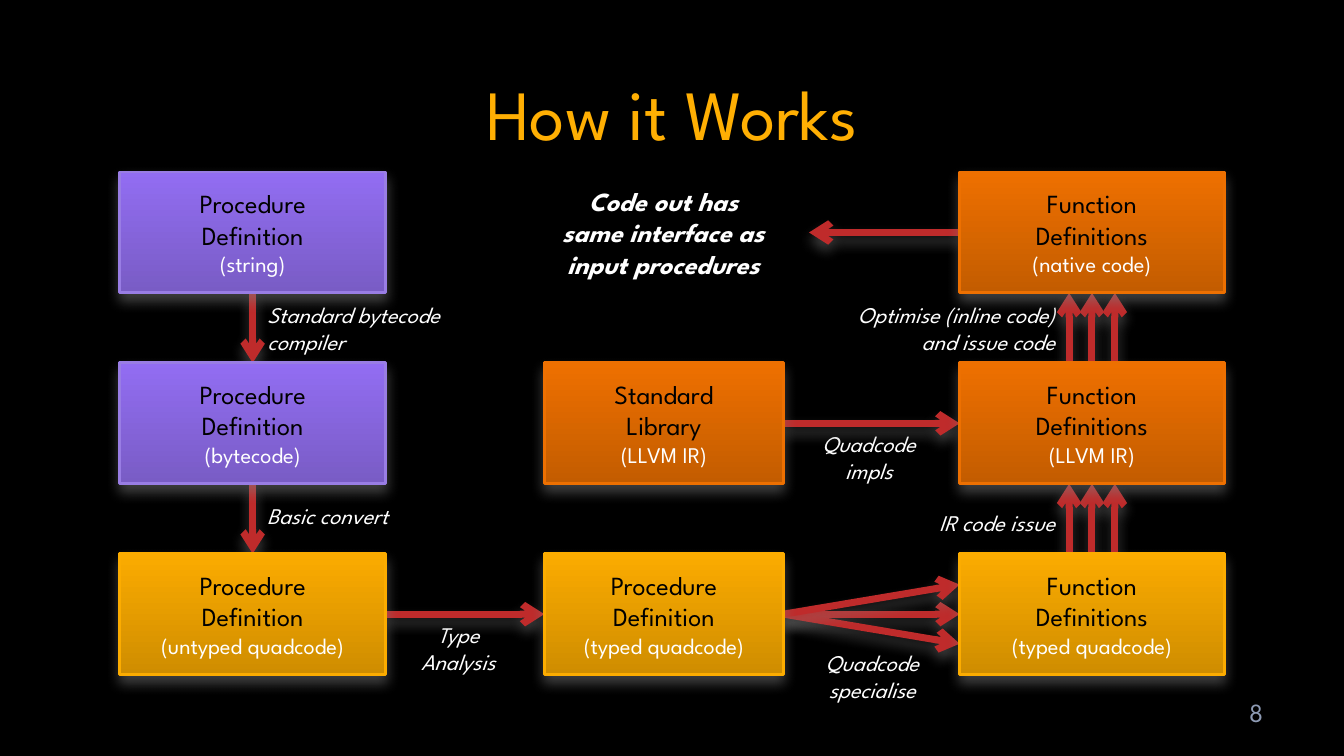
from dataclasses import dataclass

from pptx import Presentation
from pptx.dml.color import RGBColor
from pptx.enum import shapes, text
from pptx.oxml import parse_xml
from pptx.oxml.ns import nsdecls
from pptx.util import Inches, Pt

LEFT, CENTER, RIGHT = text.PP_ALIGN.LEFT, text.PP_ALIGN.CENTER, text.PP_ALIGN.RIGHT
TOP_SIDE, LEFT_SIDE, BOTTOM_SIDE, RIGHT_SIDE = range(4)


@dataclass(frozen=True)
class Style:
    size: float
    color: str
    bold: bool = False
    italic: bool = False


@dataclass(frozen=True)
class Theme:
    font: str = "League Spartan"
    background: str = "000000"
    arrow: str = "BF2B2B"
    shadow: str = "808080"
    # Gradient from bottom to top, then outline
    purple: tuple = ("795CC5", "926DF2", "997DE4")
    orange: tuple = ("C35C00", "EE7000", "ED7001")
    amber: tuple = ("CF8D00", "FBAB00", "FCAC00")
    title: Style = Style(37.8, "FFAF03")
    number: Style = Style(14, "8D9AB3")
    stage: Style = Style(14, "000000")
    form: Style = Style(12, "FFFFFF")
    label: Style = Style(12, "FFFFFF", italic=True)
    remark: Style = Style(14, "FFFFFF", bold=True, italic=True)


THEME = Theme()

# Left edge and width of each column; top edge of each row
COLUMNS = ((0.89, 1.98), (4.05, 1.78), (7.14, 1.97))
ROWS = (1.28, 2.70, 4.12)
BOX_HEIGHT = 0.9
TRIPLE_GAP = 0.17
FAN_RISE = 0.22

# Key: column, row, colours, name paragraphs, form
STAGES = {
    "string": (0, 0, THEME.purple, ["Procedure", "Definition"], "(string)"),
    "bytecode": (0, 1, THEME.purple, ["Procedure", "Definition"], "(bytecode)"),
    "untyped": (0, 2, THEME.amber, ["Procedure", "Definition"], "(untyped quadcode)"),
    "typed": (1, 2, THEME.amber, ["Procedure", "Definition"], "(typed quadcode)"),
    "functions": (2, 2, THEME.amber, ["Function", "Definitions"], "(typed quadcode)"),
    "library": (1, 1, THEME.orange, ["Standard\nLibrary"], "(LLVM IR)"),
    "ir": (2, 1, THEME.orange, ["Function", "Definitions"], "(LLVM IR)"),
    "native": (2, 0, THEME.orange, ["Function", "Definitions"], "(native code)"),
}

LINKS = (
    ("string", BOTTOM_SIDE, "bytecode", TOP_SIDE),
    ("bytecode", BOTTOM_SIDE, "untyped", TOP_SIDE),
    ("untyped", RIGHT_SIDE, "typed", LEFT_SIDE),
    ("typed", RIGHT_SIDE, "functions", LEFT_SIDE),
    ("functions", TOP_SIDE, "ir", BOTTOM_SIDE),
    ("ir", TOP_SIDE, "native", BOTTOM_SIDE),
    ("library", RIGHT_SIDE, "ir", LEFT_SIDE),
)

# Left, top, width, height, alignment, paragraphs
LABELS = (
    (1.89, 2.19, 1.85, 0.5, LEFT, ["Standard bytecode\ncompiler"]),
    (1.89, 3.69, 1.33, 0.3, LEFT, ["Basic convert"]),
    (2.75, 4.57, 1.32, 0.5, CENTER, ["Type", "Analysis"]),
    (5.83, 4.78, 1.32, 0.5, CENTER, ["Quadcode\nspecialise"]),
    (6.67, 3.74, 1.28, 0.3, RIGHT, ["IR code issue"]),
    (5.93, 2.19, 2.02, 0.5, RIGHT, ["Optimise (inline code)\nand issue code"]),
    (5.89, 3.15, 1.15, 0.5, CENTER, ["Quadcode\nimpls"]),
)


def rgb(color):
    return RGBColor.from_string(color)


def write(frame, lines, align):
    """Fill a frame with (paragraph, style) pairs; a newline is a line break."""
    for index, (words, style) in enumerate(lines):
        para = frame.add_paragraph() if index else frame.paragraphs[0]
        para.alignment = align
        for number, part in enumerate(words.split("\n")):
            if number:
                para.add_line_break()
            span = para.add_run()
            span.text = part
            font = span.font
            font.name, font.size = THEME.font, Pt(style.size)
            font.bold, font.italic = style.bold, style.italic
            font.color.rgb = rgb(style.color)


def add_shadow(properties):
    properties.append(parse_xml(
        f'<a:effectLst {nsdecls("a")}>'
        f'<a:outerShdw blurRad="{Pt(7)}" dist="{Pt(4)}" dir="5400000" rotWithShape="0">'
        f'<a:srgbClr val="{THEME.shadow}"><a:alpha val="50000"/></a:srgbClr>'
        '</a:outerShdw></a:effectLst>'))


def add_title(page, words):
    title = page.shapes.title
    title.left, title.top = Inches(0.67), Inches(0.48)
    title.width, title.height = Inches(8.66), Inches(0.65)
    frame = title.text_frame
    frame.auto_size = text.MSO_AUTO_SIZE.NONE
    frame.vertical_anchor = text.MSO_ANCHOR.TOP
    frame.margin_top, frame.margin_bottom = Inches(0.04), 0
    write(frame, [(words, THEME.title)], CENTER)


def add_text(page, left, top, width, height, align, paragraphs, style):
    box = page.shapes.add_textbox(*map(Inches, (left, top, width, height)))
    frame = box.text_frame
    frame.word_wrap = align == CENTER
    frame.auto_size = text.MSO_AUTO_SIZE.SHAPE_TO_FIT_TEXT
    write(frame, [(words, style) for words in paragraphs], align)
    return frame


def add_page_number(page, number):
    frame = add_text(page, 8.83, 5.15, 0.67, 0.3, RIGHT, [number], THEME.number)
    frame.word_wrap = True
    frame.auto_size = text.MSO_AUTO_SIZE.NONE
    frame.vertical_anchor = text.MSO_ANCHOR.MIDDLE
    frame.margin_top = frame.margin_bottom = 0


def add_stage(page, column, row, colors, name, form):
    left, width = COLUMNS[column]
    box = page.shapes.add_shape(
        shapes.MSO_SHAPE.RECTANGLE,
        *map(Inches, (left, ROWS[row], width, BOX_HEIGHT)))
    bottom, top, outline = colors
    box.fill.gradient()
    box.fill.gradient_angle = 90
    for stop, color in zip(box.fill.gradient_stops, (bottom, top)):
        stop.color.rgb = rgb(color)
    box.line.color.rgb = rgb(outline)
    box.line.width = Pt(1.5)
    add_shadow(box._element.spPr)
    frame = box.text_frame
    frame.word_wrap = True
    frame.vertical_anchor = text.MSO_ANCHOR.MIDDLE
    lines = [(words, THEME.stage) for words in name] + [(form, THEME.form)]
    write(frame, lines, CENTER)
    return box


def add_arrow(page, front, start=(0, 0), end=(0, 0), source=None, target=None):
    """Draw an arrow behind front; source and target are (box, side) joins."""
    arrow = page.shapes.add_connector(
        shapes.MSO_CONNECTOR.STRAIGHT, *map(Inches, (*start, *end)))
    if source:
        arrow.begin_connect(*source)
    if target:
        arrow.end_connect(*target)
    arrow.line.color.rgb = rgb(THEME.arrow)
    arrow.line.width = Pt(3.75)
    arrow.line._get_or_add_ln().append(
        parse_xml(f'<a:tailEnd {nsdecls("a")} type="arrow"/>'))
    add_shadow(arrow._element.spPr)
    front._element.addprevious(arrow._element)


def add_arrows(page, boxes):
    front = boxes["string"]
    for source, source_side, target, target_side in LINKS:
        add_arrow(page, front, source=(boxes[source], source_side),
                  target=(boxes[target], target_side))

    left, width = COLUMNS[2]
    middle = left + width / 2
    add_arrow(page, front, end=(6.02, ROWS[0] + BOX_HEIGHT / 2),
              source=(boxes["native"], LEFT_SIDE))
    for sign in (1, -1):
        fan_end = (left, ROWS[2] + BOX_HEIGHT / 2 + sign * FAN_RISE)
        add_arrow(page, front, end=fan_end, source=(boxes["typed"], RIGHT_SIDE))
        x = middle + sign * TRIPLE_GAP
        for upper, lower in zip(ROWS, ROWS[1:]):
            add_arrow(page, front, (x, lower), (x, upper + BOX_HEIGHT))


def main():
    deck = Presentation()
    deck.slide_width = Inches(10)
    deck.slide_height = deck.slide_width * 9 // 16
    page = deck.slides.add_slide(deck.slide_layouts[5])
    page.background.fill.solid()
    page.background.fill.fore_color.rgb = rgb(THEME.background)

    add_title(page, "How it Works")
    add_page_number(page, "8")
    for label in LABELS:
        add_text(page, *label, THEME.label)
    add_text(page, 3.84, 1.33, 2.19, 0.81, CENTER,
             ["Code out has\nsame interface as\ninput procedures"], THEME.remark)
    boxes = {key: add_stage(page, *stage) for key, stage in STAGES.items()}
    add_arrows(page, boxes)
    deck.save("out.pptx")


if __name__ == "__main__":
    main()
